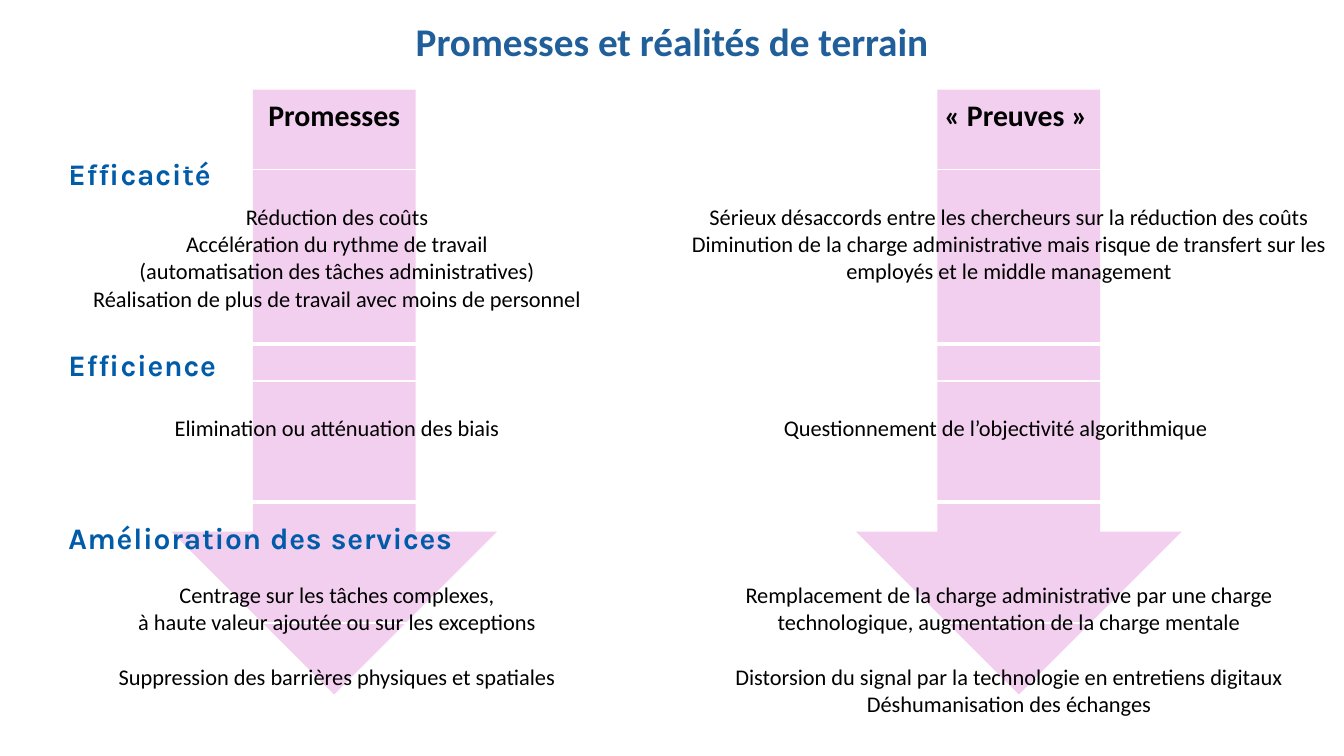
from lxml import etree
from pptx import Presentation, util as u
from pptx.dml.color import RGBColor
from pptx.enum import shapes, text
from pptx.oxml.ns import qn

COLORS = {"arrow": "F2CFEE", "title": "215F9A", "heading": "005CA9",
          "body": "000000", "rule": "FFFFFF"}
CENTER, LEFT = text.PP_ALIGN.CENTER, text.PP_ALIGN.LEFT
LINE = 19.5  # height of one body line, in points
NO_STYLE = "{2D5ABB26-0587-4C30-8999-92F81FD0307C}"

deck = Presentation()
deck.slide_width, deck.slide_height = u.Inches(13.33), u.Inches(7.5)
slide = deck.slides.add_slide(deck.slide_layouts[6])
column = deck.slide_width // 2


def write(frame, groups, size=16, font="Calibri", color="body", bold=False,
          align=CENTER, tracking=0):
    """Fill a frame with groups of lines, one blank line's height between groups."""
    frame.word_wrap = True
    paragraph = None
    for group in groups:
        for i, line in enumerate(group):
            first = paragraph is None
            paragraph = frame.paragraphs[0] if first else frame.add_paragraph()
            if i == 0 and not first:
                paragraph.space_before = u.Pt(LINE)
            paragraph.alignment = align
            run = paragraph.add_run()
            run.text = line
            run.font.size, run.font.name, run.font.bold = u.Pt(size), font, bold
            run.font.color.rgb = RGBColor.from_string(COLORS[color])
            if tracking:
                run.font._element.set("spc", str(tracking))


def add_border(cell, side, width):
    line = etree.SubElement(cell._tc.get_or_add_tcPr(), qn("a:ln" + side),
                            w=str(u.Pt(width)))
    fill = etree.SubElement(line, qn("a:solidFill"))
    etree.SubElement(fill, qn("a:srgbClr"), val=COLORS["rule"])


# Background arrows
for left in (8.49, 1.7):
    arrow = slide.shapes.add_shape(shapes.MSO_SHAPE.DOWN_ARROW, u.Inches(left),
                                   u.Inches(0.89), u.Inches(3.23), u.Inches(6))
    arrow.shadow.inherit = False
    arrow.fill.solid()
    arrow.fill.fore_color.rgb = RGBColor.from_string(COLORS["arrow"])
    arrow.line.fill.background()

# Title
title = slide.shapes.add_textbox(0, u.Inches(0.12), deck.slide_width, u.Inches(0.57))
write(title.text_frame, [["Promesses et réalités de terrain"]],
      size=28, color="title", bold=True)

# Sections: heading, heading top, table top, row heights, bordered,
# left inset of the evidence (None when centred), promises, evidence
sections = [
    ("Efficacité", 1.5, 1.68, [1.73], True, None,
     [["Réduction des coûts", "Accélération du rythme de travail",
       "(automatisation des tâches administratives)",
       "Réalisation de plus de travail avec moins de personnel"]],
     [["Sérieux désaccords entre les chercheurs sur la réduction des coûts",
       "Diminution de la charge administrative mais risque de transfert sur les "
       "employés et le middle management"]]),
    ("Efficience", 3.39, 3.78, [1.2, 1.2], True, 1.1,
     [["Elimination ou atténuation des biais"]],
     [["Questionnement de l’objectivité algorithmique"]]),
    ("Amélioration des services", 5.11, 5.43, [1.73], False, None,
     [["Centrage sur les tâches complexes,",
       "à haute valeur ajoutée ou sur les exceptions"],
      ["Suppression des barrières physiques et spatiales"]],
     [["Remplacement de la charge administrative par une charge "
       "technologique, augmentation de la charge mentale"],
      ["Distorsion du signal par la technologie en entretiens digitaux",
       "Déshumanisation des échanges"]]),
]

for name, name_top, top, heights, bordered, inset, promises, evidence in sections:
    heading = slide.shapes.add_textbox(u.Inches(0.58), u.Inches(name_top),
                                       u.Inches(4.36), u.Inches(0.46))
    write(heading.text_frame, [[name]], size=21.3, font="Karla", color="heading",
          bold=True, align=LEFT, tracking=60)

    comparison = slide.shapes.add_table(
        len(heights), 2, u.Inches(0.01), u.Inches(top), 2 * column,
        u.Inches(sum(heights))).table
    comparison.first_row = comparison.horz_banding = False
    comparison._tbl.tblPr.find(qn("a:tableStyleId")).text = NO_STYLE
    for r, height in enumerate(heights):
        comparison.rows[r].height = u.Inches(height)
        for c in range(2):
            cell = comparison.cell(r, c)
            cell.margin_left = cell.margin_right = u.Inches(0.13)
            cell.margin_top = u.Inches(0.07) + u.Pt(LINE)
            cell.margin_bottom = u.Inches(0.07)
            if bordered:
                for side in "LRTB":
                    add_border(cell, side, 3 if side == "B" and r == 0 else 1)
            cell.fill.background()
            if r == 0:
                shifted = c == 1 and inset is not None
                if shifted:
                    cell.margin_left = u.Inches(inset)
                write(cell.text_frame, (promises, evidence)[c],
                      align=LEFT if shifted else CENTER)

# Column labels
for label, left, width in (("Promesses", 2.47, 1.69), ("« Preuves »", 9.17, 1.81)):
    box = slide.shapes.add_textbox(u.Inches(left), u.Inches(0.91),
                                   u.Inches(width), u.Inches(0.46))
    write(box.text_frame, [[label]], size=21.3, bold=True)

deck.save("out.pptx")
